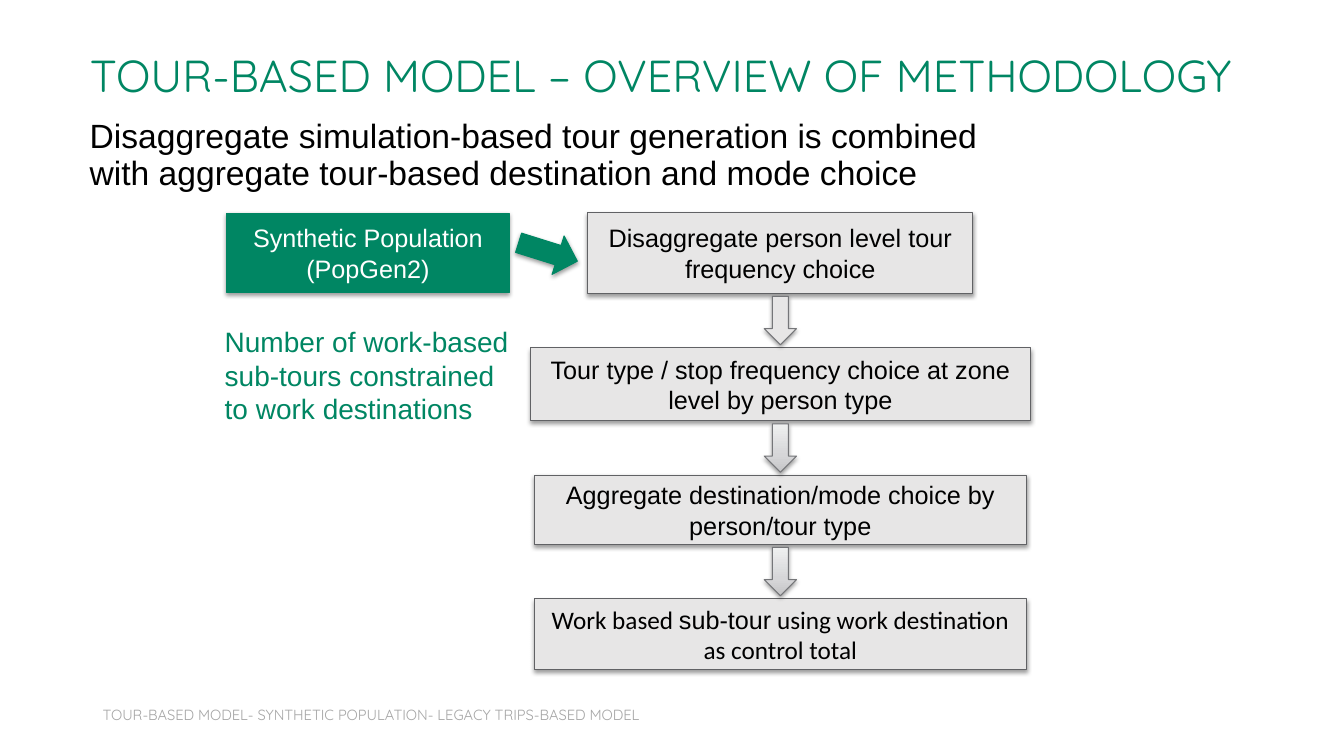
from dataclasses import dataclass

from lxml import etree
from pptx import Presentation
from pptx import util as u
from pptx.dml.color import RGBColor
from pptx.enum import shapes, text
from pptx.oxml import ns


@dataclass(frozen=True)
class Theme:
    green: str = "008663"
    panel: str = "E7E6E6"
    panel_edge: str = "616265"
    arrow_edge: str = "757679"
    black: str = "000000"
    white: str = "FFFFFF"
    muted: str = "A6A6A6"
    gradient: tuple = ((0, "C5C5C7"), (35, "D6D6D8"), (100, "EFF0F0"))
    heading: str = "Quicksand"
    sans: str = "Arial"
    humanist: str = "Calibri"
    title_size: float = 32
    lead_size: float = 24
    note_size: float = 20
    step_size: float = 18
    footer_size: float = 10.5
    edge_width: float = 0.75


THEME = Theme()
SLIDE_WIDTH, SLIDE_HEIGHT = u.Inches(13.33), u.Inches(7.5)

TITLE = "TOUR-BASED MODEL – OVERVIEW OF METHODOLOGY"
LEAD = ("Disaggregate simulation-based tour generation is combined ",
        "with aggregate tour-based destination and mode choice")
INPUT = "Synthetic Population (PopGen2)"
NOTE = "Number of work-based sub-tours constrained to work destinations"
FOOTER = "TOUR-BASED MODEL- SYNTHETIC POPULATION- LEGACY TRIPS-BASED MODEL"
STEPS = [
    {"top": 28.13, "width": 28.66, "height": 10.67,
     "runs": [("Disaggregate person level tour frequency choice", THEME.sans)]},
    {"top": 46, "width": 37.21, "height": 9.6,
     "runs": [("Tour type / stop frequency choice at zone level by person type", THEME.sans)]},
    {"top": 62.93, "width": 36.61, "height": 9.07,
     "runs": [("Aggregate destination/mode choice by person/tour type", THEME.sans)]},
    {"top": 79.2, "width": 36.61, "height": 9.33,
     "runs": [("Work based ", THEME.humanist), ("sub-tour", THEME.sans),
              (" using work destination as control total", THEME.humanist)]},
]

TITLE_AREA = (5.93, 6.4, 90.4, 7.87)
LEAD_AREA = (5.93, 15.2, 80.8, 72.53)
INPUT_AREA = (16.88, 28.27, 21, 10.4)
INPUT_ARROW_AREA = (38.48, 30.67, 4.58, 5.33)
NOTE_AREA = (15.98, 42.27, 22.73, 15.07)
FOOTER_AREA = (6.9, 92.67, 46.29, 3.87)
FLOW_CENTER = 58.06
ARROW_WIDTH, ARROW_HEIGHT = 2.4, 6.4
INPUT_ARROW_TURN = 17.4


def place(area):
    return [int(share * side / 100)
            for share, side in zip(area, (SLIDE_WIDTH, SLIDE_HEIGHT) * 2)]


def add_run(paragraph, words, font, size, color):
    run = paragraph.add_run()
    run.text = words
    run.font.name = font
    run.font.size = u.Pt(size)
    run.font.color.rgb = RGBColor.from_string(color)


def add_color(parent, color):
    return etree.SubElement(parent, ns.qn("a:srgbClr"), val=color)


def add_shadow(properties):
    effects = etree.SubElement(properties, ns.qn("a:effectLst"))
    shadow = etree.SubElement(effects, ns.qn("a:outerShdw"), blurRad="40000",
                              dist="20000", dir="5400000", rotWithShape="0")
    etree.SubElement(add_color(shadow, THEME.black), ns.qn("a:alpha"), val="38000")


def add_gradient(properties):
    properties.remove(properties.find(ns.qn("a:solidFill")))
    gradient = etree.Element(ns.qn("a:gradFill"), rotWithShape="1")
    stops = etree.SubElement(gradient, ns.qn("a:gsLst"))
    for position, color in THEME.gradient:
        add_color(etree.SubElement(stops, ns.qn("a:gs"), pos=str(position * 1000)), color)
    etree.SubElement(gradient, ns.qn("a:lin"), ang="16200000", scaled="0")
    properties.find(ns.qn("a:prstGeom")).addnext(gradient)


def add_block(slide, preset, area, fill, edge):
    block = slide.shapes.add_shape(preset, *place(area))
    block.fill.solid()
    block.fill.fore_color.rgb = RGBColor.from_string(fill)
    block.line.color.rgb = RGBColor.from_string(edge)
    block.line.width = u.Pt(THEME.edge_width)
    add_shadow(block.element.spPr)
    return block


def add_step(slide, area, fill, edge, runs, color):
    step = add_block(slide, shapes.MSO_SHAPE.FLOWCHART_PROCESS, area, fill, edge)
    step.text_frame.word_wrap = True
    step.text_frame.vertical_anchor = text.MSO_ANCHOR.MIDDLE
    paragraph = step.text_frame.paragraphs[0]
    paragraph.alignment = text.PP_ALIGN.CENTER
    for words, font in runs:
        add_run(paragraph, words, font, THEME.step_size, color)


def add_words(slide, area, lines, font, size, color, spacing=1.0):
    frame = slide.shapes.add_textbox(*place(area)).text_frame
    frame.word_wrap = True
    paragraph = frame.paragraphs[0]
    paragraph.line_spacing = spacing
    for index, line in enumerate(lines):
        if index:
            paragraph.add_line_break()
        add_run(paragraph, line, font, size, color)


def add_title(slide):
    title = slide.shapes.title
    title.left, title.top, title.width, title.height = place(TITLE_AREA)
    frame = title.text_frame
    frame.word_wrap = True
    frame.auto_size = text.MSO_AUTO_SIZE.NONE
    frame.vertical_anchor = text.MSO_ANCHOR.TOP
    paragraph = frame.paragraphs[0]
    paragraph.alignment = text.PP_ALIGN.LEFT
    paragraph.line_spacing = 0.9
    add_run(paragraph, TITLE, THEME.heading, THEME.title_size, THEME.green)


def add_flow(slide):
    for step in STEPS:
        area = (FLOW_CENTER - step["width"] / 2, step["top"], step["width"], step["height"])
        add_step(slide, area, THEME.panel, THEME.panel_edge, step["runs"], THEME.black)
    for index, (upper, lower) in enumerate(zip(STEPS, STEPS[1:])):
        middle = (upper["top"] + upper["height"] + lower["top"]) / 2
        area = (FLOW_CENTER - ARROW_WIDTH / 2, middle - ARROW_HEIGHT / 2,
                ARROW_WIDTH, ARROW_HEIGHT)
        arrow = add_block(slide, shapes.MSO_SHAPE.DOWN_ARROW, area,
                          THEME.panel, THEME.arrow_edge)
        if index:
            add_gradient(arrow.element.spPr)


def main():
    deck = Presentation()
    deck.slide_width, deck.slide_height = SLIDE_WIDTH, SLIDE_HEIGHT
    slide = deck.slides.add_slide(deck.slide_layouts.get_by_name("Title Only"))
    add_title(slide)
    add_words(slide, LEAD_AREA, LEAD, THEME.sans, THEME.lead_size, THEME.black, 0.9)
    add_step(slide, INPUT_AREA, THEME.green, THEME.green, [(INPUT, THEME.sans)], THEME.white)
    input_arrow = add_block(slide, shapes.MSO_SHAPE.RIGHT_ARROW, INPUT_ARROW_AREA,
                            THEME.green, THEME.green)
    input_arrow.rotation = INPUT_ARROW_TURN
    add_flow(slide)
    add_words(slide, NOTE_AREA, [NOTE], THEME.sans, THEME.note_size, THEME.green)
    add_words(slide, FOOTER_AREA, [FOOTER], THEME.heading, THEME.footer_size, THEME.muted)
    deck.save("out.pptx")


if __name__ == "__main__":
    main()
